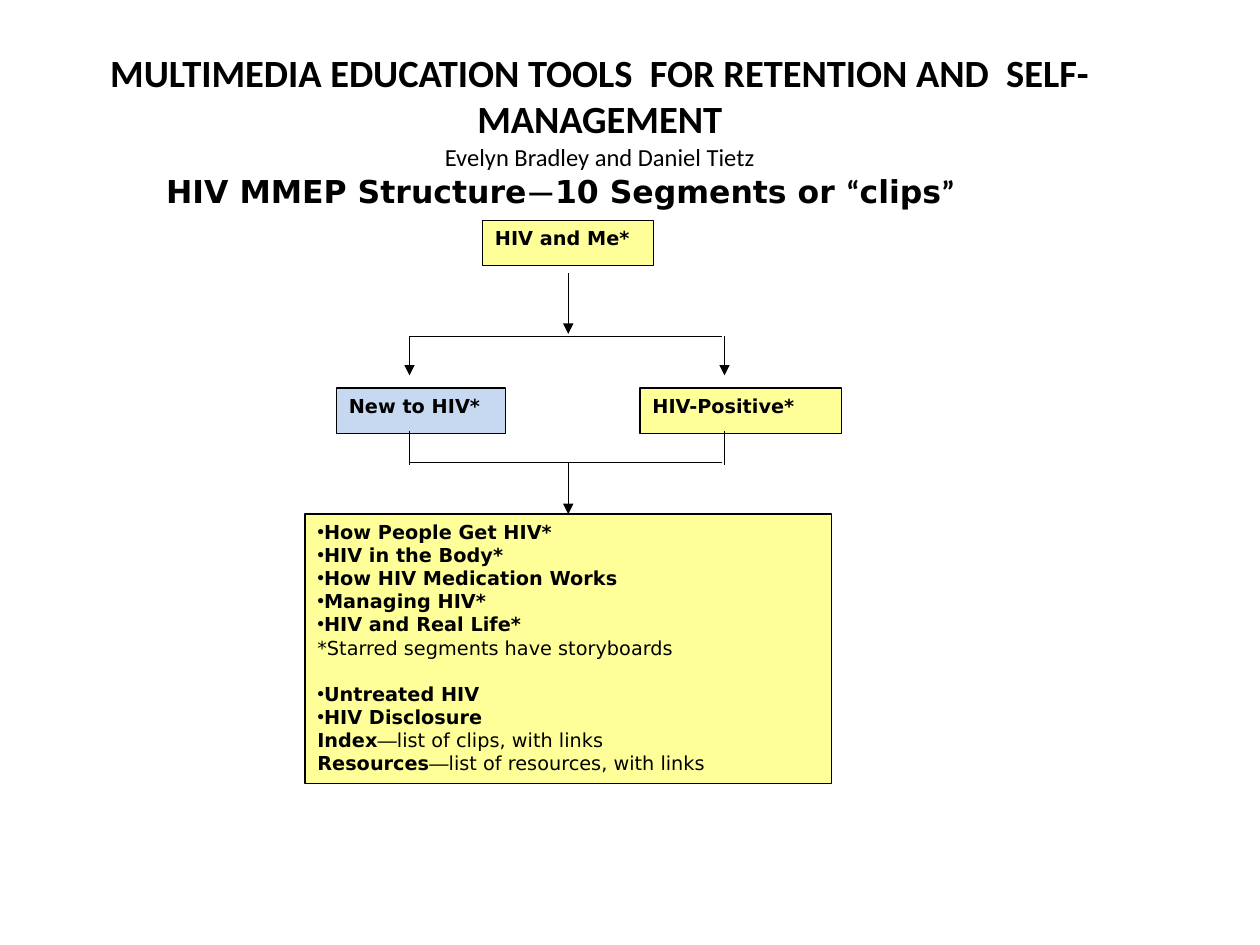
import dataclasses
import typing

import lxml.etree
import pptx
import pptx.dml.color
import pptx.enum.shapes
import pptx.enum.text
import pptx.oxml
import pptx.oxml.ns
import pptx.util

Inches = pptx.util.Inches
Pt = pptx.util.Pt
RGBColor = pptx.dml.color.RGBColor
qn = pptx.oxml.ns.qn

BLACK = RGBColor(0x00, 0x00, 0x00)
YELLOW = RGBColor(0xFF, 0xFF, 0x99)
BLUE = RGBColor(0xC6, 0xD9, 0xF1)

SANS = "DejaVu Sans"
LEFT, MID, RIGHT = 3.25, 4.51, 5.75
SPLIT, JOIN, BAR_END = 2.67, 3.67, 5.73


class Span(typing.NamedTuple):
    text: str
    bold: bool = True
    font: str = SANS


@dataclasses.dataclass
class Item:
    spans: list[Span]
    bullet: bool = False
    gap: float = 0


@dataclasses.dataclass
class Box:
    left: float
    top: float
    width: float
    height: float
    fill: RGBColor
    items: list[Item]


class Line(typing.NamedTuple):
    x1: float
    y1: float
    x2: float
    y2: float
    arrow: bool = False


def style(run, size: float, bold: bool, font: str) -> None:
    run.font.size = Pt(size)
    run.font.bold = bold
    run.font.name = font
    run.font.color.rgb = BLACK


def add_spans(para, spans: list[Span], size: float) -> None:
    for span in spans:
        run = para.add_run()
        run.text = span.text
        style(run, size, span.bold, span.font)


def add_bullet(para) -> None:
    props = para._p.get_or_add_pPr()
    props.set("marL", "0")
    props.set("indent", "0")
    lxml.etree.SubElement(props, qn("a:buFont")).set("typeface", "Arial")
    lxml.etree.SubElement(props, qn("a:buChar")).set("char", "•")


def draw_box(slide, box: Box):
    shape = slide.shapes.add_shape(
        pptx.enum.shapes.MSO_SHAPE.RECTANGLE,
        Inches(box.left), Inches(box.top), Inches(box.width), Inches(box.height))
    shape.shadow.inherit = False
    shape.fill.solid()
    shape.fill.fore_color.rgb = box.fill
    shape.line.color.rgb = BLACK
    shape.line.width = Pt(0.75)
    frame = shape.text_frame
    frame.word_wrap = True
    frame.vertical_anchor = pptx.enum.text.MSO_ANCHOR.TOP
    for i, item in enumerate(box.items):
        para = frame.add_paragraph() if i else frame.paragraphs[0]
        para.alignment = pptx.enum.text.PP_ALIGN.LEFT
        para.space_before = Pt(item.gap)
        if item.bullet:
            add_bullet(para)
        add_spans(para, item.spans, 11)
    return shape


def draw_line(slide, line: Line):
    link = slide.shapes.add_connector(
        pptx.enum.shapes.MSO_CONNECTOR.STRAIGHT,
        Inches(line.x1), Inches(line.y1), Inches(line.x2), Inches(line.y2))
    link.line.color.rgb = BLACK
    link.line.width = Pt(0.75)
    props = link._element.spPr
    if line.arrow:
        tail = lxml.etree.SubElement(props.find(qn("a:ln")), qn("a:tailEnd"))
        tail.set("type", "triangle")
    lxml.etree.SubElement(props, qn("a:effectLst"))
    return link


def draw_title(slide) -> None:
    title = slide.shapes.title
    title.left, title.top = Inches(0.51), Inches(0.34)
    title.width, title.height = Inches(8.5), Inches(1.49)
    frame = title.text_frame
    frame.word_wrap = True
    frame.vertical_anchor = pptx.enum.text.MSO_ANCHOR.TOP
    para = frame.paragraphs[0]
    para.text = ("MULTIMEDIA EDUCATION TOOLS  FOR RETENTION AND  SELF-MANAGEMENT"
                 "\vEvelyn Bradley and Daniel Tietz")
    para.alignment = pptx.enum.text.PP_ALIGN.CENTER
    head, names = para.runs
    style(head, 22, True, "Calibri")
    style(names, 14, False, "Calibri")


def draw_heading(slide) -> None:
    area = slide.shapes.add_textbox(
        Inches(1.22), Inches(1.32), Inches(7.08), Inches(0.4))
    area.text_frame.word_wrap = True
    add_spans(area.text_frame.paragraphs[0], [
        Span("HIV MMEP Structure"), Span("—", font="Calibri"),
        Span("10 Segments or "), Span("“", font="Calibri"),
        Span("clips"), Span("”", font="Calibri")], 18)


def clip(text: str, gap: float = 0) -> Item:
    return Item([Span(text)], bullet=True, gap=gap)


def entry(name: str, note: str) -> Item:
    return Item([Span(name), Span("—", False, "Arial"), Span(note, False)])


STEPS = [
    Box(3.83, 1.75, 1.36, 0.36, YELLOW, [Item([Span("HIV and Me*")])]),
    Box(2.67, 3.08, 1.34, 0.36, BLUE, [Item([Span("New to HIV*")])]),
    Box(5.08, 3.08, 1.6, 0.36, YELLOW, [Item([Span("HIV-Positive*")])]),
]
CLIPS = Box(2.42, 4.08, 4.18, 2.14, YELLOW, [
    clip("How People Get HIV*"),
    clip("HIV in the Body*"),
    clip("How HIV Medication Works"),
    clip("Managing HIV*"),
    clip("HIV and Real Life*"),
    Item([Span("*Starred segments have storyboards", False)]),
    clip("Untreated HIV", gap=13.2),
    clip("HIV Disclosure"),
    entry("Index", "list of clips, with links"),
    entry("Resources", "list of resources, with links"),
])
LINES = [Line(MID, 2.17, MID, 2.65, True)]
LINES += [Line(LEFT, y, BAR_END, y) for y in (SPLIT, JOIN)]
for x in (LEFT, RIGHT):
    LINES += [Line(x, SPLIT, x, 2.98, True), Line(x, 3.42, x, 3.69)]


def main() -> None:
    deck = pptx.Presentation()
    deck.slide_width, deck.slide_height = Inches(10), Inches(7.5)
    slide = deck.slides.add_slide(deck.slide_layouts.get_by_name("Title Only"))
    draw_title(slide)
    for box in STEPS:
        draw_box(slide, box)
    target = draw_box(slide, CLIPS)
    for line in LINES:
        draw_line(slide, line)
    last = draw_line(slide, Line(MID, JOIN, MID, CLIPS.top, True))
    last.end_connect(target, 0)
    draw_heading(slide)
    deck.save("out.pptx")


if __name__ == "__main__":
    main()
